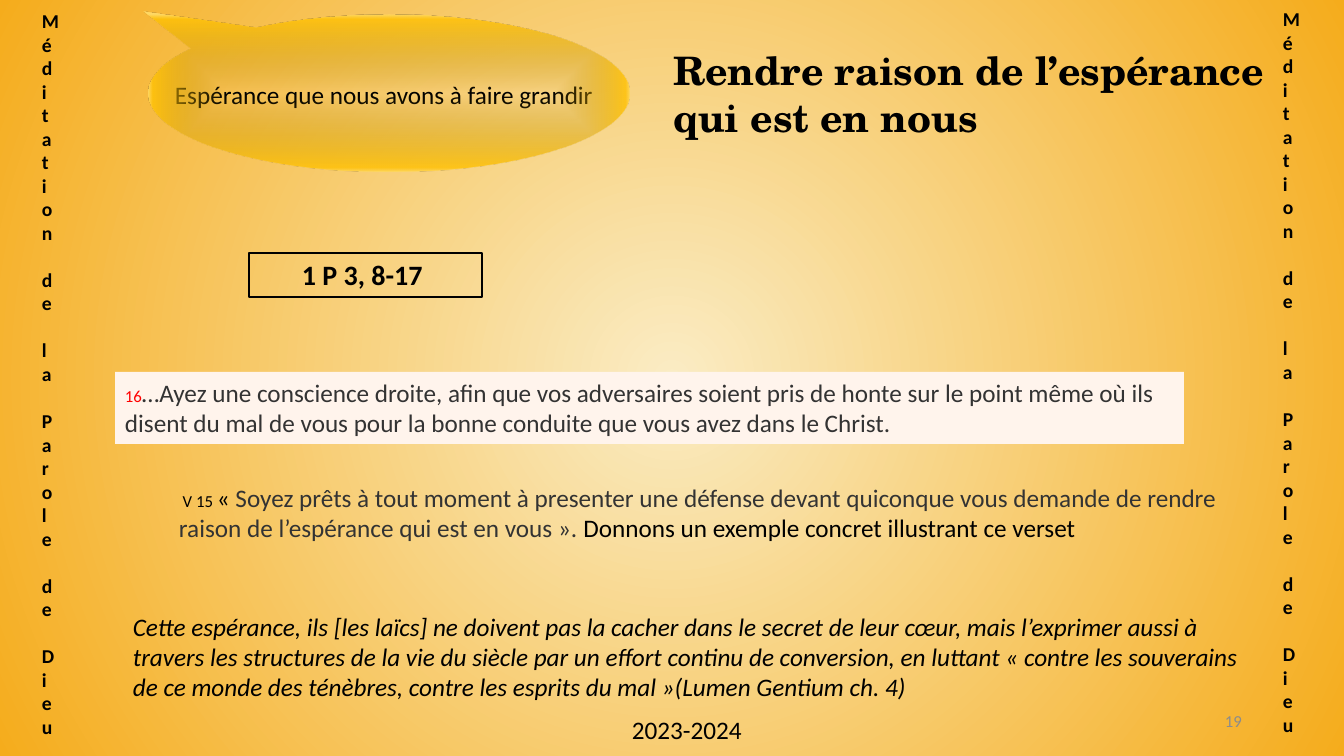
from dataclasses import dataclass

from lxml import etree
from pptx import Presentation
from pptx.dml.color import RGBColor
from pptx.enum.shapes import MSO_SHAPE as Shape
from pptx.enum.text import MSO_ANCHOR as Anchor, MSO_AUTO_SIZE as AutoSize, PP_ALIGN as Align
from pptx.oxml.ns import qn
from pptx.util import Emu, Pt


@dataclass(frozen=True)
class Theme:
    body_font: str = "Calibri"
    title_font: str = "TeX Gyre Schola"
    black: str = "000000"
    gray: str = "333333"
    pale_gray: str = "8C8C8C"
    red: str = "FF0000"
    cream: str = "FFF4EC"
    small: int = 12
    banner: int = 14
    body: int = 18
    reference: int = 20
    title: int = 28


THEME = Theme()
SCALE = 914400 / 100.8  # EMU in one px

# Content: a run is (text, size, colour)
TITLE = "Rendre raison de l’espérance qui est en nous"
BANNER = "Méditation de la Parole de Dieu"
BANNER_BOXES = [(32, 4, 48, 748), (1273, 2, 48, 748)]
DATE = [("2023-2024", THEME.body, THEME.black)]
REFERENCE = [("1 P 3, 8-17 ", THEME.reference, THEME.black)]
VERSE_16 = [
    ("16", THEME.small, THEME.red),
    ("…Ayez une conscience droite, afin que vos adversaires soient pris de honte sur le point "
     "même où ils disent du mal de vous pour la bonne conduite que vous avez dans le Christ.",
     THEME.body, THEME.gray),
]
VERSE_15 = [
    (" V 15 ", THEME.small, THEME.black),
    ("« ", THEME.body, THEME.black),
    ("Soyez prêts à tout moment à presenter une défense devant quiconque vous demande de rendre "
     "raison de l’espérance qui est en vous ». ", THEME.body, THEME.gray),
    ("Donnons un exemple concret illustrant ce verset", THEME.body, THEME.black),
]
QUOTE = [
    ("Cette espérance, ils [les laïcs] ne doivent pas la cacher dans le secret de leur cœur, mais "
     "l’exprimer aussi à travers les structures de la vie du siècle par un effort continu de "
     "conversion, en luttant « contre les souverains de ce monde des ténèbres, contre les esprits "
     "du mal »(Lumen Gentium ch. 4)", THEME.body, THEME.black),
]
HOPE = [("Espérance que nous avons à faire grandir", THEME.body, THEME.black)]
NUMBER = [("19", THEME.small, THEME.pale_gray)]
# Gradient stops: position, colour, opacity (%)
BACKGROUND_STOPS = [(0, "FAECC4", 100), (100, "F5AC1C", 100)]
CALLOUT_STOPS = [(0, "AB8100", 0), (94, "FFC208", 85), (100, "FFD966", 100)]


def px(values):
    return [Emu(round(value * SCALE)) for value in values]


def set_path_gradient(fill, element, stops, kind):
    """Fill with a gradient that spreads from the centre."""
    fill.gradient()
    gradient = next(element.iter(qn("a:gradFill")))
    for child in list(gradient):
        gradient.remove(child)
    stop_list = etree.SubElement(gradient, qn("a:gsLst"))
    for position, color, opacity in stops:
        stop = etree.SubElement(stop_list, qn("a:gs"), pos=str(position * 1000))
        rgb = etree.SubElement(stop, qn("a:srgbClr"), val=color)
        if opacity < 100:
            etree.SubElement(rgb, qn("a:alpha"), val=str(opacity * 1000))
    spread = etree.SubElement(gradient, qn("a:path"), path=kind)
    etree.SubElement(spread, qn("a:fillToRect"), l="50000", t="50000", r="50000", b="50000")


def write(shape, runs, font=THEME.body_font, bold=False, italic=False, align=Align.LEFT,
          anchor=Anchor.TOP, wrap=True, size_mode=AutoSize.SHAPE_TO_FIT_TEXT):
    frame = shape.text_frame
    frame.word_wrap = wrap
    frame.auto_size = size_mode
    frame.vertical_anchor = anchor
    paragraph = frame.paragraphs[0]
    paragraph.alignment = align
    for text, size, color in runs:
        run = paragraph.add_run()
        run.text = text
        run.font.name = font
        run.font.size = Pt(size)
        run.font.bold = bold
        run.font.italic = italic
        run.font.color.rgb = RGBColor.from_string(color)


def add_text(shapes, box, runs, **options):
    shape = shapes.add_textbox(*px(box))
    write(shape, runs, **options)
    return shape


def add_box(shapes, box, preset=Shape.RECTANGLE):
    shape = shapes.add_shape(preset, *px(box))
    shape.shadow.inherit = False
    shape.fill.background()
    shape.line.fill.background()
    return shape


def main():
    presentation = Presentation()
    presentation.slide_width, presentation.slide_height = px((1344, 756))
    slide = presentation.slides.add_slide(presentation.slide_layouts[5])
    shapes = slide.shapes
    set_path_gradient(slide.background.fill, slide.element, BACKGROUND_STOPS, "circle")

    # Title
    title = shapes.title
    title.left, title.top, title.width, title.height = px((663, 41, 623, 105))
    write(title, [(TITLE, THEME.title, THEME.black)], font=THEME.title_font, bold=True,
          size_mode=AutoSize.NONE)

    # Stacked banners on both sides
    for box in BANNER_BOXES:
        banner = add_text(shapes, box, [(BANNER, THEME.banner, THEME.black)], bold=True,
                          anchor=Anchor.MIDDLE)
        banner.text_frame._txBody.bodyPr.set("vert", "wordArtVert")

    # Reference and verses
    add_text(shapes, (622, 709, 135, 40), DATE)
    reference = add_box(shapes, (249, 253, 233, 44))
    reference.line.color.rgb = RGBColor.from_string(THEME.black)
    reference.line.width = Pt(1)
    write(reference, REFERENCE, bold=True, align=Align.CENTER)
    verse = add_box(shapes, (115, 372, 1069, 72))
    verse.fill.solid()
    verse.fill.fore_color.rgb = RGBColor.from_string(THEME.cream)
    write(verse, VERSE_16)
    add_text(shapes, (169, 477, 1069, 72), VERSE_15)
    add_text(shapes, (123, 606, 1133, 102), QUOTE, italic=True)

    # Callout, laid over its text
    group = shapes.add_group_shape()
    add_text(group.shapes, (165, 74, 444, 40), HOPE, wrap=False)
    callout = add_box(group.shapes, (148, 15, 481, 157), Shape.OVAL_CALLOUT)
    callout.adjustments[0] = -0.51
    callout.adjustments[1] = -0.52
    set_path_gradient(callout.fill, callout.element, CALLOUT_STOPS, "shape")

    # Slide number
    add_text(shapes, (950, 701, 302, 40), NUMBER, align=Align.RIGHT, anchor=Anchor.MIDDLE,
             size_mode=AutoSize.NONE)

    presentation.save("out.pptx")


if __name__ == "__main__":
    main()
